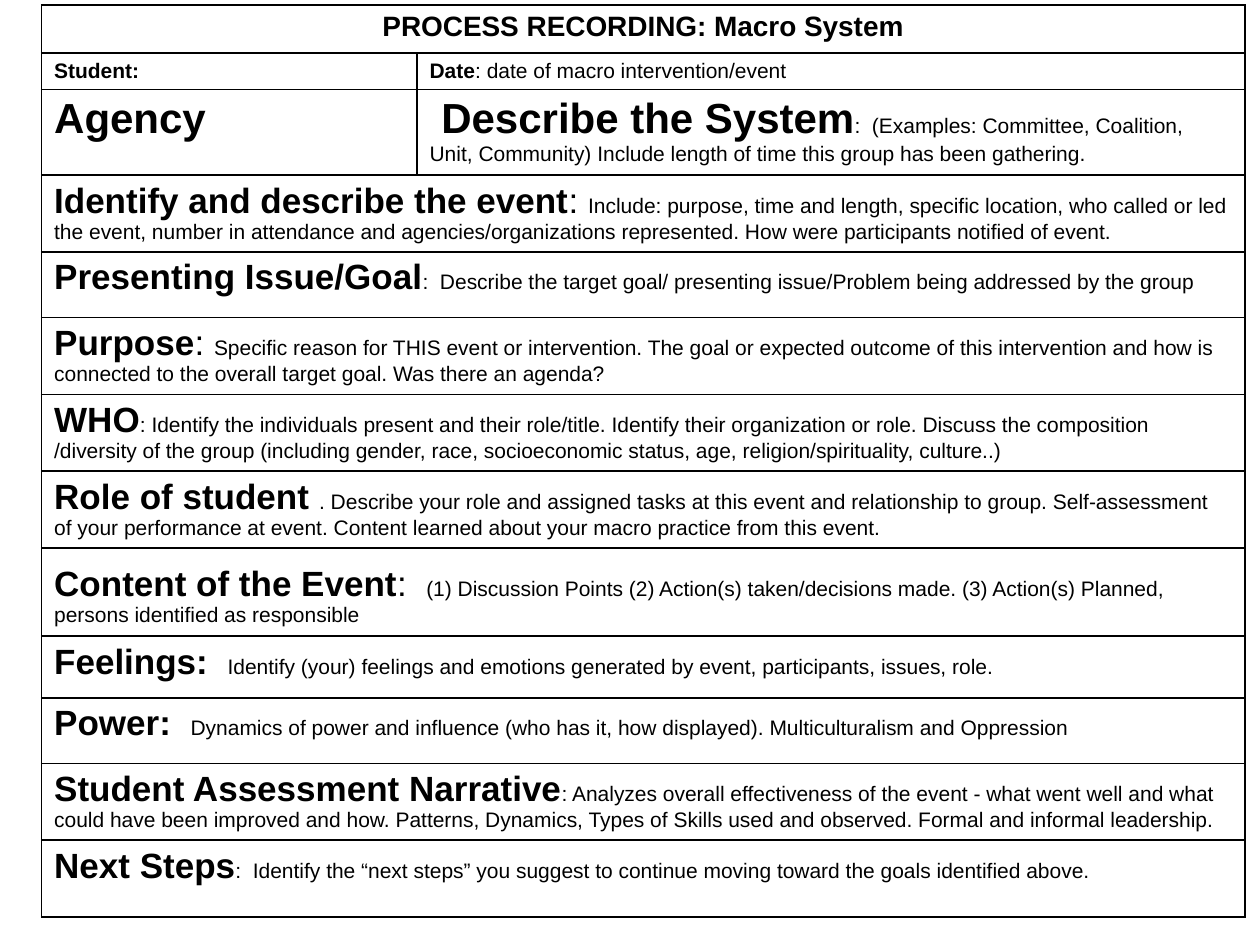
"""Builds the process recording form for a macro system."""
from lxml import etree
from pptx import Presentation
from pptx import util as u
from pptx.dml.color import RGBColor
from pptx.enum import text
from pptx.oxml.ns import qn

COLORS = {"ink": "000000", "paper": "FFFFFF"}
FONT = "Arial"
BODY_SIZE, HEADING_SIZE, SYSTEM_SIZE, TITLE_SIZE = 12, 20, 24, 16
COLUMN_WIDTHS = [2.98, 6.57]
ROW_HEIGHTS = [0.38, 0.29, 0.68, 0.61, 0.52, 0.61, 0.61, 0.61, 0.7, 0.49, 0.52, 0.61, 0.61]
TITLE = "PROCESS RECORDING: Macro System"
CONTENT_HEADING = "Content of the Event"

DETAILS = [
    [("Student:", BODY_SIZE, "", ""),
     ("Date", BODY_SIZE, "", ": date of macro intervention/event")],
    [("Agency", SYSTEM_SIZE, "", ""),
     (" Describe the System", SYSTEM_SIZE, "",
      ":  (Examples: Committee, Coalition, Unit, Community) Include length of time "
      "this group has been gathering.")],
]

SECTIONS = [
    ("Identify and describe the event", ": ",
     "Include: purpose, time and length, specific location, who called or led the event, "
     "number in attendance and agencies/organizations represented. How were participants "
     "notified of event."),
    ("Presenting Issue/Goal", "",
     ":  Describe the target goal/ presenting issue/Problem being addressed by the group"),
    ("Purpose", ": ",
     "Specific reason for THIS event or intervention. The goal or expected outcome of this "
     "intervention and how is connected to the overall target goal. Was there an agenda?"),
    ("WHO", "",
     ": Identify the individuals present and their role/title. Identify their organization "
     "or role. Discuss the composition /diversity of the group (including gender, race, "
     "socioeconomic status, age, religion/spirituality, culture..)"),
    ("Role of student ", "",
     ". Describe your role and assigned tasks at this event and relationship to group. "
     "Self-assessment of your performance at event. Content learned about your macro "
     "practice from this event."),
    (CONTENT_HEADING, ":  ",
     "(1) Discussion Points (2) Action(s) taken/decisions made. (3) Action(s) Planned, "
     "persons identified as responsible"),
    ("Feelings:  ", "",
     "Identify (your) feelings and emotions generated by event, participants, issues, role."),
    ("Power:  ", "",
     "Dynamics of power and influence (who has it, how displayed). "
     "Multiculturalism and Oppression"),
    ("Student Assessment Narrative", "",
     ": Analyzes overall effectiveness of the event - what went well and what could have "
     "been improved and how. Patterns, Dynamics, Types of Skills used and observed. "
     "Formal and informal leadership."),
    ("Next Steps", "",
     ":  Identify the “next steps” you suggest to continue moving toward the goals "
     "identified above."),
]


def add_run(paragraph, content, size, bold):
    """Add one formatted run to a paragraph."""
    run = paragraph.add_run()
    run.text = content
    run.font.name = FONT
    run.font.size = u.Pt(size)
    run.font.bold = bold
    run.font.color.rgb = RGBColor.from_string(COLORS["ink"])


def fill_cell(cell, heading, size, separator="", body=""):
    """Write a bold heading, its plain separator and the smaller body text."""
    paragraph = cell.text_frame.paragraphs[0]
    runs = [(heading, size, True), (separator, size, False), (body, BODY_SIZE, False)]
    for content, run_size, bold in runs:
        if content:
            add_run(paragraph, content, run_size, bold)


def style_cell(cell):
    """Give a cell a plain fill and thin borders on all sides."""
    properties = cell._tc.get_or_add_tcPr()
    for side in ("lnL", "lnR", "lnT", "lnB"):
        line = etree.SubElement(properties, qn(f"a:{side}"), w=str(u.Pt(1)))
        fill = etree.SubElement(line, qn("a:solidFill"))
        etree.SubElement(fill, qn("a:srgbClr"), val=COLORS["ink"])
    cell.fill.solid()
    cell.fill.fore_color.rgb = RGBColor.from_string(COLORS["paper"])


def add_form(slide):
    """Add the empty bordered form table and return it."""
    table = slide.shapes.add_table(
        len(ROW_HEIGHTS), len(COLUMN_WIDTHS), u.Inches(0.33), u.Inches(0.04),
        u.Inches(sum(COLUMN_WIDTHS)), u.Inches(sum(ROW_HEIGHTS))).table
    table.first_row = table.horz_banding = False
    for column, width in zip(table.columns, COLUMN_WIDTHS):
        column.width = u.Inches(width)
    for row, height in zip(table.rows, ROW_HEIGHTS):
        row.height = u.Inches(height)
    for cell in table.iter_cells():
        style_cell(cell)
    return table


def merge_row(table, row):
    """Merge a row across both columns and return its cell."""
    cell = table.cell(row, 0)
    cell.merge(table.cell(row, 1))
    return cell


def main():
    """Build and save the slide."""
    presentation = Presentation()
    presentation.slide_width, presentation.slide_height = u.Inches(10), u.Inches(7.5)
    slide = presentation.slides.add_slide(presentation.slide_layouts[6])
    table = add_form(slide)

    title_cell = merge_row(table, 0)
    fill_cell(title_cell, TITLE, TITLE_SIZE)
    title_cell.text_frame.paragraphs[0].alignment = text.PP_ALIGN.CENTER

    for row, details in enumerate(DETAILS, start=1):
        for column, detail in enumerate(details):
            fill_cell(table.cell(row, column), *detail)

    for row, (heading, separator, body) in enumerate(SECTIONS, start=1 + len(DETAILS)):
        cell = merge_row(table, row)
        fill_cell(cell, heading, HEADING_SIZE, separator, body)
        if heading == CONTENT_HEADING:
            cell.margin_top = u.Inches(0.13)

    presentation.save("out.pptx")


if __name__ == "__main__":
    main()
